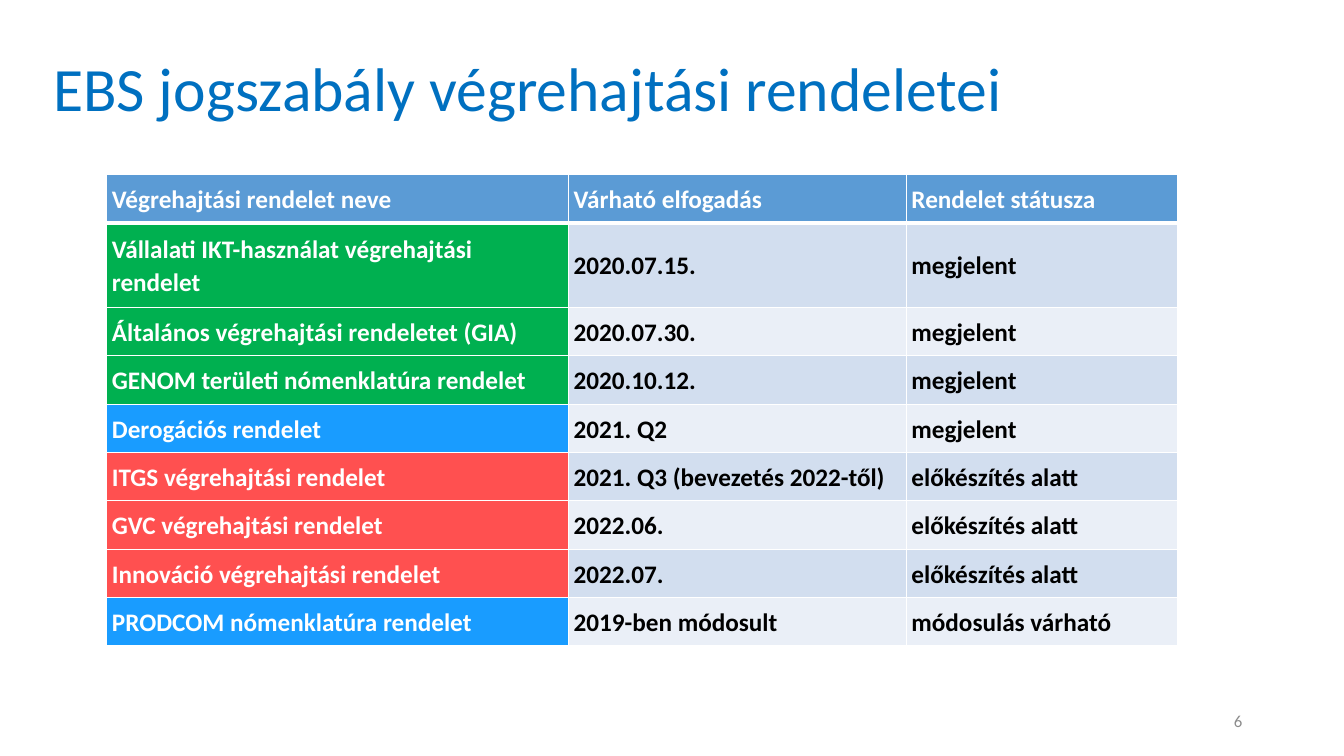
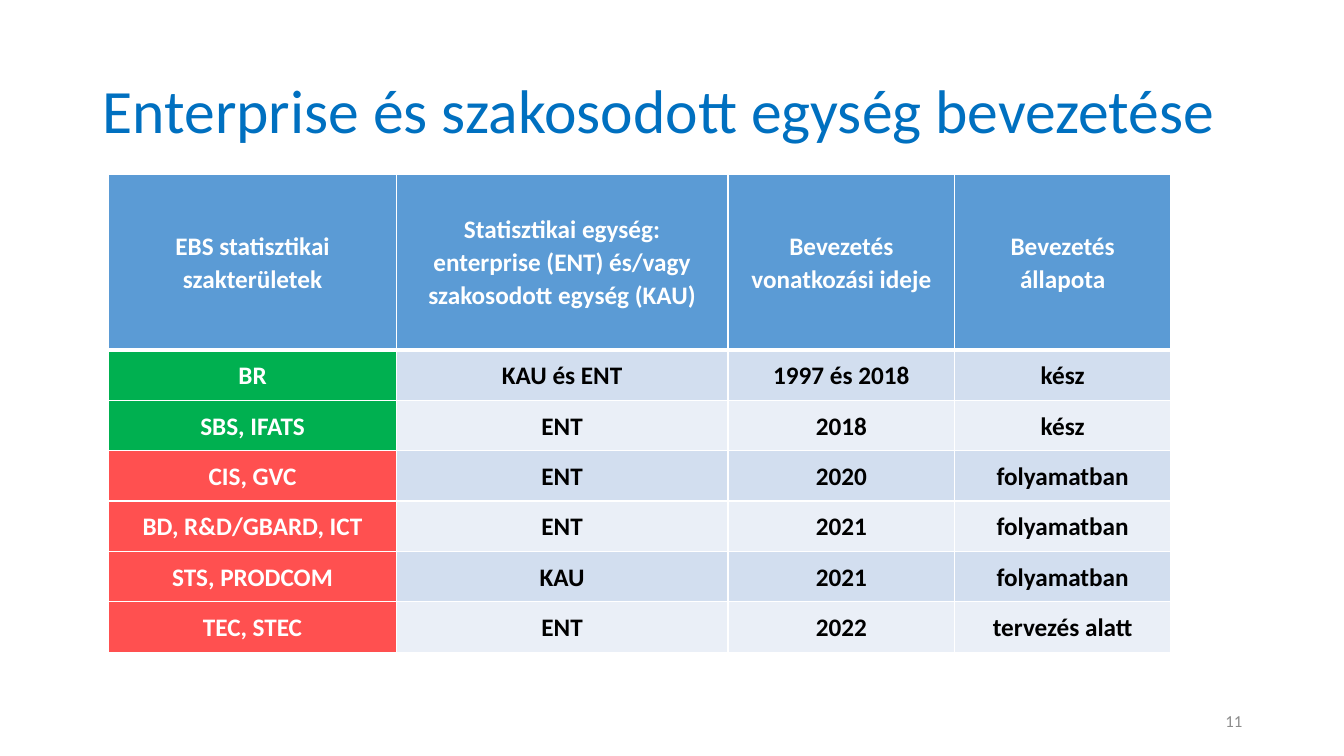
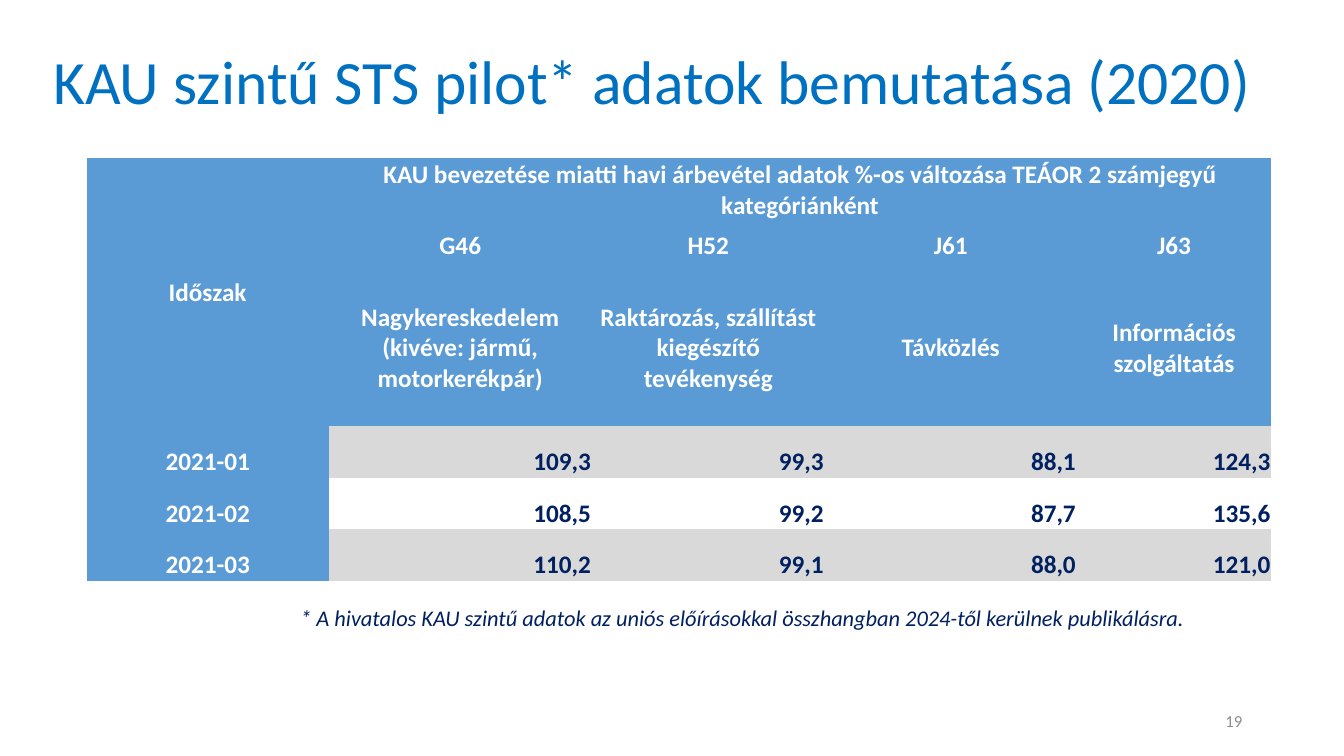
from dataclasses import dataclass

from lxml import etree
from pptx import Presentation
from pptx import util as u
from pptx.dml.color import RGBColor
from pptx.enum import text
from pptx.oxml import ns

ALIGN, ANCHOR = text.PP_ALIGN, text.MSO_ANCHOR


@dataclass(frozen=True)
class Theme:
    font: str = "Calibri"
    title_size: int = 44
    table_size: int = 18
    note_size: int = 16
    number_size: int = 12
    title: str = "0070C0"
    number: str = "8C8C8C"
    header: str = "5B9BD5"
    white: str = "FFFFFF"
    black: str = "000000"
    navy: str = "002060"
    grey: str = "D9D9D9"
    green: str = "00B050"
    blue: str = "199CFF"
    red: str = "FF5050"
    bands: tuple = ("D2DEEF", "EAEFF7")


THEME = Theme()
NO_STYLE = "{2D5ABB26-0587-4C30-8999-92F81FD0307C}"
EMU_PER_PX = 9144  # 100 px to the inch


def px(length):
    return u.Emu(length * EMU_PER_PX)


# Text
def write(frame, content, size, color, align=ALIGN.LEFT, spacing=1.0,
          bold=False, italic=False):
    """Fill a text frame, one paragraph for each line of content."""
    frame.word_wrap = True
    for index, line in enumerate(content.split("\n")):
        para = frame.add_paragraph() if index else frame.paragraphs[0]
        para.text = line
        para.alignment = align
        para.line_spacing = spacing
        font = para.font
        font.name, font.size = THEME.font, u.Pt(size)
        font.bold, font.italic = bold, italic
        font.color.rgb = RGBColor.from_string(color)


def add_text(page, area, content, size, color, anchor=ANCHOR.MIDDLE, **style):
    box = page.shapes.add_textbox(*map(px, area))
    box.text_frame.vertical_anchor = anchor
    write(box.text_frame, content, size, color, **style)


# Tables
def add_grid(page, left, top, columns, rows):
    """Add an unstyled table with the given column widths and row heights."""
    frame = page.shapes.add_table(len(rows), len(columns), px(left), px(top),
                                  px(sum(columns)), px(sum(rows)))
    table = frame.table
    table.first_row = table.horz_banding = False
    frame._element.find(".//" + ns.qn("a:tableStyleId")).text = NO_STYLE
    for column, width in zip(table.columns, columns):
        column.width = px(width)
    for row, height in zip(table.rows, rows):
        row.height = px(height)
    return table


def add_borders(cell, top, bottom):
    """Draw white cell edges; top and bottom are widths in points."""
    props = cell._tc.get_or_add_tcPr()
    for edge, width in (("L", 1), ("R", 1), ("T", top), ("B", bottom)):
        line = etree.SubElement(props, ns.qn("a:ln" + edge), w=str(u.Pt(width)))
        fill = etree.SubElement(line, ns.qn("a:solidFill"))
        etree.SubElement(fill, ns.qn("a:srgbClr"), val=THEME.white)


def fill_cell(cell, content, fill, ink, margins, anchor=ANCHOR.MIDDLE, **style):
    cell.fill.solid()
    cell.fill.fore_color.rgb = RGBColor.from_string(fill)
    cell.vertical_anchor = anchor
    side, top = margins
    cell.margin_left = cell.margin_right = px(side)
    cell.margin_top, cell.margin_bottom = px(top), 0
    write(cell.text_frame, content, THEME.table_size, ink, bold=True, **style)


def add_status_table(page, left, top, columns, rows, header, records, align):
    """Header, then records of a status colour followed by the cell texts."""
    table = add_grid(page, left, top, columns, rows)
    lines = [(THEME.header, *header), *records]
    for r, (status, *contents) in enumerate(lines):
        for c, content in enumerate(contents):
            cell = table.cell(r, c)
            colored = r == 0 or c == 0
            add_borders(cell, 3 if r == 1 else 1, 3 if r == 0 else 1)
            fill_cell(cell, content,
                      status if colored else THEME.bands[(r - 1) % 2],
                      THEME.white if colored else THEME.black,
                      (5, 0), align=align, spacing=1.07)


def add_index_table(page, left, top, columns, rows, corner, heading, groups,
                    records):
    """Three header rows with merged cells, then one row for each period."""
    table = add_grid(page, left, top, columns, rows)
    margins = (1, 1)

    def head(row, column, content, anchor=ANCHOR.MIDDLE):
        fill_cell(table.cell(row, column), content, THEME.header, THEME.white,
                  margins, anchor, align=ALIGN.CENTER)

    # Headers
    table.cell(0, 0).merge(table.cell(2, 0))
    table.cell(0, 1).merge(table.cell(0, len(columns) - 1))
    head(0, 0, corner)
    head(0, 1, heading)
    for c, (code, name) in enumerate(groups, 1):
        head(1, c, code)
        head(2, c, name)

    # Values
    for r, (period, *values) in enumerate(records, 3):
        head(r, 0, period, ANCHOR.BOTTOM)
        for c, value in enumerate(values, 1):
            fill_cell(table.cell(r, c), value,
                      THEME.grey if r % 2 else THEME.white, THEME.navy,
                      margins, ANCHOR.BOTTOM, align=ALIGN.RIGHT)


# Pages
def add_page(deck, title, title_area, number):
    page = deck.slides.add_slide(deck.slide_layouts[6])
    add_text(page, title_area, title, THEME.title_size, THEME.title, spacing=0.9)
    add_text(page, (942, 695, 300, 40), number, THEME.number_size, THEME.number,
             align=ALIGN.RIGHT)
    return page


def regulations_page(deck):
    page = add_page(deck, "EBS jogszabály végrehajtási rendeletei",
                    (43, 36, 1223, 110), "6")
    published, preparing = "megjelent", "előkészítés alatt"
    add_status_table(
        page, 106, 173, (458, 335, 269), (48, 84) + (48,) * 7,
        ("Végrehajtási rendelet neve", "Várható elfogadás", "Rendelet státusza"),
        [
            (THEME.green, "Vállalati IKT-használat végrehajtási rendelet",
             "2020.07.15.", published),
            (THEME.green, "Általános végrehajtási rendeletet (GIA)",
             "2020.07.30.", published),
            (THEME.green, "GENOM területi nómenklatúra rendelet",
             "2020.10.12.", published),
            (THEME.blue, "Derogációs rendelet", "2021. Q2", published),
            (THEME.red, "ITGS végrehajtási rendelet",
             "2021. Q3 (bevezetés 2022-től)", preparing),
            (THEME.red, "GVC végrehajtási rendelet", "2022.06.", preparing),
            (THEME.red, "Innováció végrehajtási rendelet", "2022.07.", preparing),
            (THEME.blue, "PRODCOM nómenklatúra rendelet",
             "2019-ben módosult", "módosulás várható"),
        ], ALIGN.LEFT)


def units_page(deck):
    page = add_page(deck, "Enterprise és szakosodott egység bevezetése",
                    (92, 40, 1190, 145), "11")
    done, running = "kész", "folyamatban"
    add_status_table(
        page, 108, 173, (285, 329, 225, 214), (174,) + (50,) * 6,
        ("EBS statisztikai szakterületek",
         "Statisztikai egység:\nenterprise (ENT) és/vagy szakosodott egység (KAU)",
         "Bevezetés\nvonatkozási ideje", "Bevezetés\nállapota"),
        [
            (THEME.green, "BR", "KAU és ENT", "1997 és 2018", done),
            (THEME.green, "SBS, IFATS", "ENT", "2018", done),
            (THEME.red, "CIS, GVC", "ENT", "2020", running),
            (THEME.red, "BD, R&D/GBARD, ICT", "ENT", "2021", running),
            (THEME.red, "STS, PRODCOM", "KAU", "2021", running),
            (THEME.red, "TEC, STEC", "ENT", "2022", "tervezés alatt"),
        ], ALIGN.CENTER)


def pilot_page(deck):
    page = add_page(deck, "KAU szintű STS pilot* adatok bemutatása (2020)",
                    (43, 11, 1218, 145), "19")
    add_index_table(
        page, 86, 157, (240, 261, 231, 250, 193), (62, 48, 156, 51, 51, 51),
        "Időszak",
        "KAU bevezetése miatti havi árbevétel adatok %-os változása "
        "TEÁOR 2 számjegyű kategóriánként",
        [
            ("G46", "Nagykereskedelem (kivéve: jármű, motorkerékpár)"),
            ("H52", "Raktározás, szállítást kiegészítő tevékenység"),
            ("J61", "Távközlés"),
            ("J63", "Információs szolgáltatás"),
        ],
        [
            ("2021-01", "109,3", "99,3", "88,1", "124,3"),
            ("2021-02", "108,5", "99,2", "87,7", "135,6"),
            ("2021-03", "110,2", "99,1", "88,0", "121,0"),
        ])
    add_text(page, (288, 597, 953, 58),
             "* A hivatalos KAU szintű adatok az uniós előírásokkal összhangban "
             "2024-től kerülnek publikálásra.",
             THEME.note_size, THEME.navy, ANCHOR.TOP, spacing=0.9, italic=True)


def main():
    deck = Presentation()
    deck.slide_width, deck.slide_height = px(1333), px(750)
    for build in (regulations_page, units_page, pilot_page):
        build(deck)
    deck.save("out.pptx")


if __name__ == "__main__":
    main()
